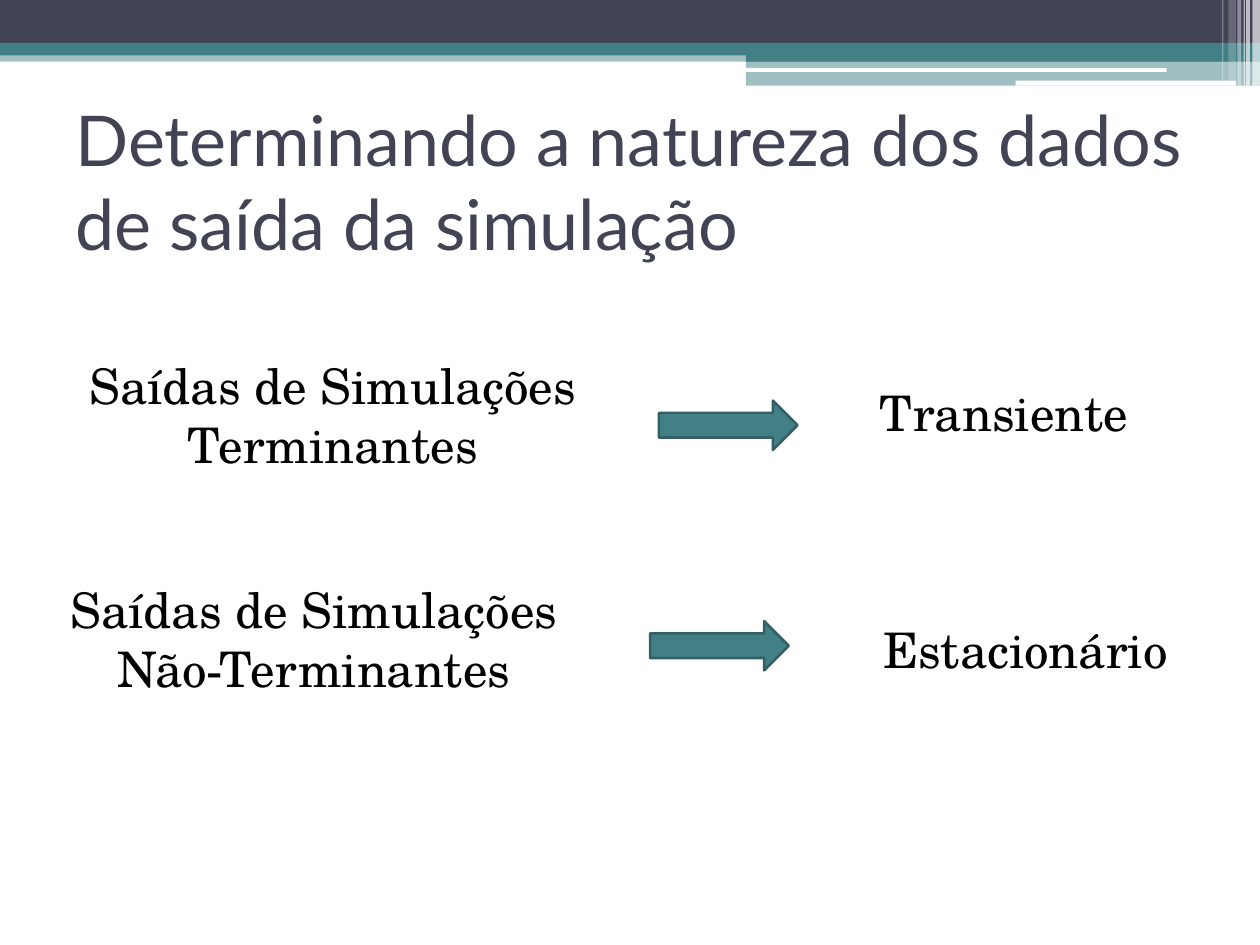
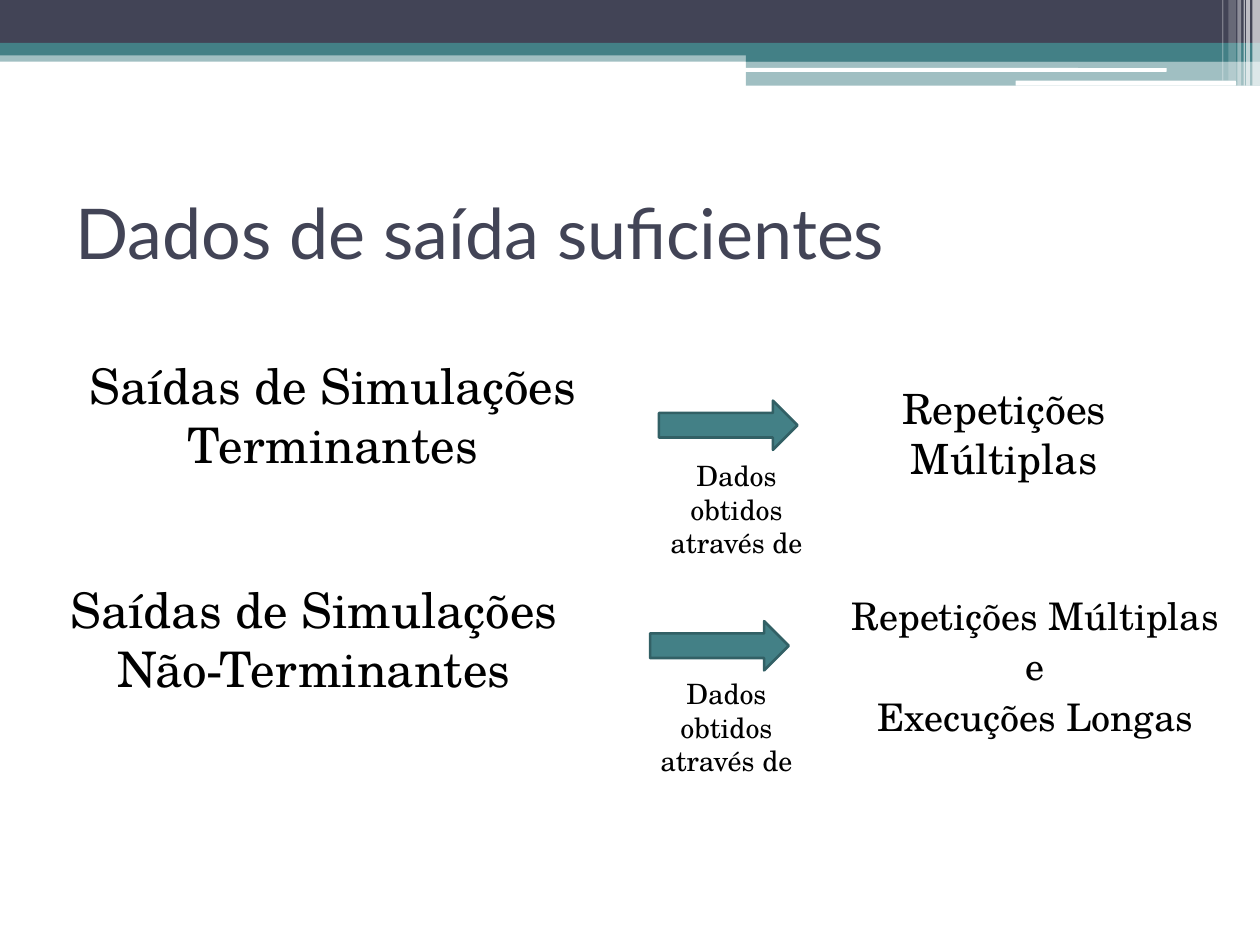
from pptx import Presentation
from pptx import util as u
from pptx.dml.color import RGBColor
from pptx.enum import shapes, text
from pptx.oxml.ns import qn
from lxml import etree

NAVY = RGBColor(0x42, 0x44, 0x56)
TEAL = RGBColor(0x43, 0x80, 0x86)
DARK_TEAL = RGBColor(0x32, 0x60, 0x65)
WHITE = RGBColor(0xFF, 0xFF, 0xFF)
BLACK = RGBColor(0x00, 0x00, 0x00)
TITLE_FONT = "Lato"
BODY_FONT = "TeX Gyre Schola"
RECT = shapes.MSO_SHAPE.RECTANGLE
ROUNDED = shapes.MSO_SHAPE.ROUNDED_RECTANGLE
ARROW = shapes.MSO_SHAPE.RIGHT_ARROW

BANDS = [
    (RECT, (0, 0.4, 10, 0.09), TEAL, 50),
    (RECT, (0, 0, 10, 0.34), NAVY, 100),
    (RECT, (0, 0.34, 10, 0.1), TEAL, 100),
    (RECT, (5.92, 0.39, 4.08, 0.1), TEAL, 100),
    (RECT, (5.92, 0.48, 4.08, 0.2), TEAL, 50),
    (ROUNDED, (5.91, 0.54, 3.35, 0.03), WHITE, 100),
    (ROUNDED, (8.06, 0.64, 1.75, 0.04), WHITE, 100),
]
STRIPES = [
    (9.94, 0.06, 0.68, 65),
    (9.89, 0.03, 0.68, 65),
    (9.87, 0.01, 0.68, 60),
    (9.82, 0.03, 0.68, 40),
    (9.75, 0.06, 0.64, 20),
    (9.7, 0.01, 0.64, 30),
]
OUTPUT_ROWS = [
    ("Saídas de Simulações Terminantes", (0.4, 2.77), (5.23, 3.18)),
    ("Saídas de Simulações Não-Terminantes", (0.25, 4.55), (5.16, 4.93)),
]


class Deck:
    def __init__(self):
        self.presentation = Presentation()
        self.presentation.slide_width = u.Inches(10)
        self.presentation.slide_height = u.Inches(7.5)
        self.page = None

    def add_page(self, title, place):
        self.page = self.presentation.slides.add_slide(self.presentation.slide_layouts[5])
        for kind, band, color, opacity in BANDS:
            self.shape(kind, band, color, opacity)
        for left, width, height, opacity in STRIPES:
            self.shape(RECT, (left, 0, width, height), WHITE, opacity)
        self.title(title, place)
        for label, (left, top), arrow_corner in OUTPUT_ROWS:
            self.label([label], (left, top, 4.36, 1.62), 28)
            self.arrow(arrow_corner)

    def title(self, words, place):
        box = self.page.shapes.title
        box.left, box.top, box.width, box.height = map(u.Inches, place)
        frame = box.text_frame
        frame.text = words
        frame.word_wrap = True
        frame.auto_size = text.MSO_AUTO_SIZE.NONE
        frame.vertical_anchor = text.MSO_ANCHOR.MIDDLE
        para = frame.paragraphs[0]
        para.alignment = text.PP_ALIGN.LEFT
        self.format_runs(para, TITLE_FONT, 40, NAVY)

    def shape(self, kind, place, color, opacity=100):
        box = self.page.shapes.add_shape(kind, *map(u.Inches, place))
        box.shadow.inherit = False
        box.fill.solid()
        box.fill.fore_color.rgb = color
        box.line.fill.background()
        if opacity < 100:
            color_node = next(box.fill._xPr.iter(qn("a:srgbClr")))
            etree.SubElement(color_node, qn("a:alpha"), val=str(opacity * 1000))
        return box

    def arrow(self, corner):
        box = self.shape(ARROW, (*corner, 1.1, 0.39), TEAL)
        box.line.color.rgb = DARK_TEAL
        box.line.width = u.Pt(1.5)

    def label(self, lines, place, size):
        box = self.page.shapes.add_textbox(*map(u.Inches, place))
        frame = box.text_frame
        frame.text = "\n".join(lines)
        frame.word_wrap = True
        for para in frame.paragraphs:
            para.alignment = text.PP_ALIGN.CENTER
            para.space_before = u.Pt(3)
            para._p.get_or_add_pPr().set("marL", str(u.Inches(0.12)))
            self.format_runs(para, BODY_FONT, size, BLACK)

    def format_runs(self, para, font, size, color):
        for span in para.runs:
            span.font.name = font
            span.font.size = u.Pt(size)
            span.font.color.rgb = color


def main():
    deck = Deck()

    deck.add_page("Determinando a natureza dos dados de saída da simulação", (0.5, 0.68, 9.5, 1.5))
    deck.label(["Transiente"], (6.33, 2.99, 3.16, 0.77), 28)
    deck.label(["Estacionário"], (6.5, 4.87, 3.16, 0.77), 28)

    deck.add_page("Dados de saída suficientes", (0.5, 1.25, 9, 1.17))
    deck.label(["Repetições Múltiplas"], (6.33, 2.99, 3.16, 0.77), 23.8)
    deck.label(["Repetições Múltiplas", "e", "Execuções Longas"], (6.5, 4.65, 3.31, 1.3), 21.7)
    for left, top in [(4.92, 3.59), (4.84, 5.32)]:
        deck.label(["Dados obtidos através de"], (left, top, 1.73, 0.71), 16)

    deck.presentation.save("out.pptx")


if __name__ == "__main__":
    main()
